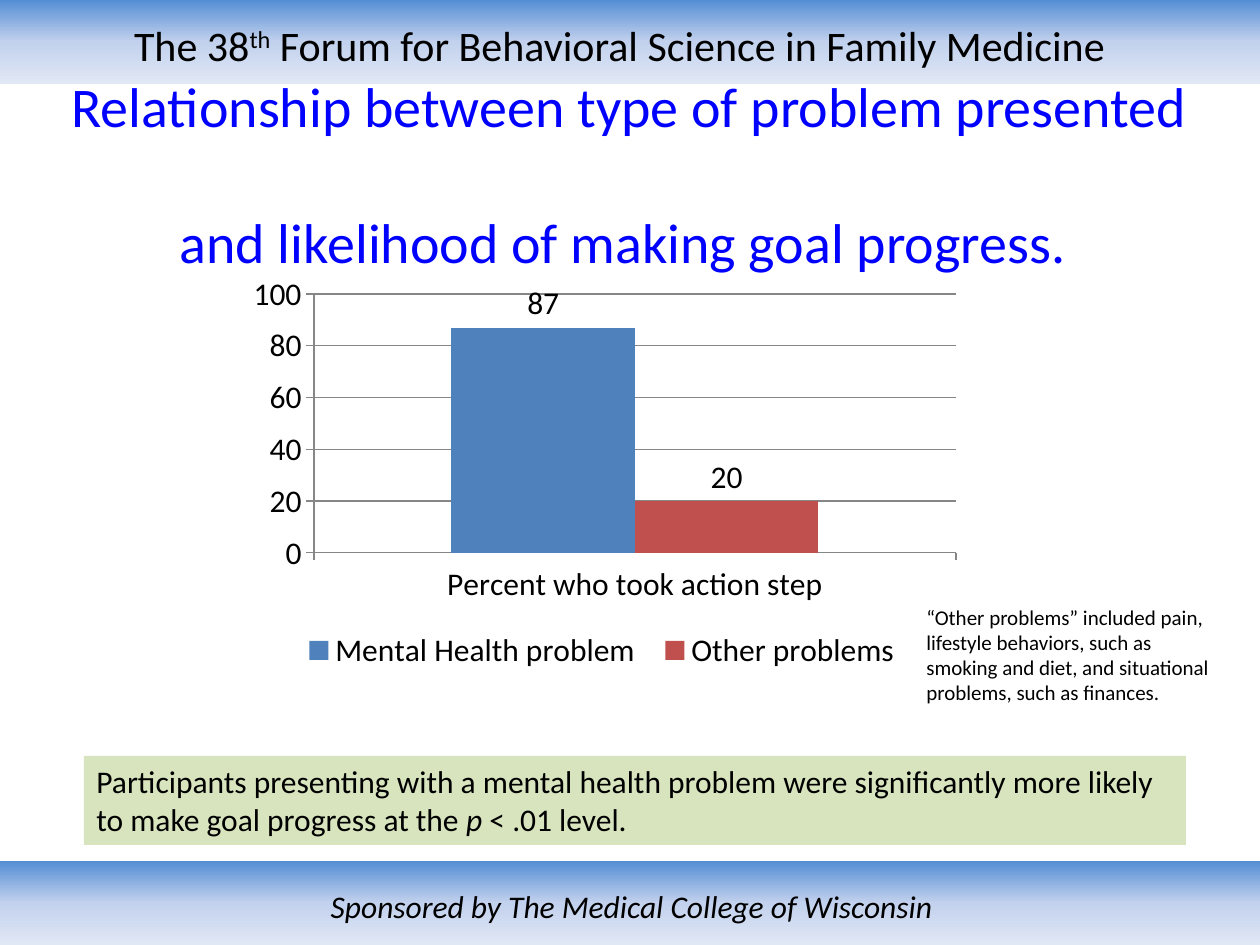
from copy import deepcopy

from lxml import etree
from pptx import Presentation, util as u
from pptx.chart.data import CategoryChartData
from pptx.dml.color import RGBColor
from pptx.enum import chart as ch, shapes, text
from pptx.oxml.ns import qn

PX = 914400 / 126
FONT = "Calibri"
COLORS = {
    "text": "000000", "title": "0000FF", "callout": "D7E4BD", "grid": "868686",
    "mental": "4F81BD", "other": "C0504D",
}
BAND_STOPS = [(0, "558ED5"), (0.5, "C2D1ED"), (1, "E1E8F5")]

BANDS = [
    {"box": (0, 0, 1260, 84), "size": 24, "right": 33, "runs": [
        ("The 38", {}), ("th", {"baseline": "30000"}),
        (" Forum for Behavioral Science in Family Medicine", {})]},
    {"box": (0, 861, 1264, 84), "size": 18, "right": 13, "runs": [
        ("Sponsored by The Medical College of Wisconsin", {"italic": True})]},
]
TITLE = {"box": (53, 126, 1153, 94), "size": 32, "lines": [
    "Relationship between type of problem presented",
    "and likelihood of making goal progress. "]}
CHART = {
    "box": (231, 262, 976, 551),
    "category": "Percent who took action step",
    "series": [("Mental Health problem", 87, "mental"), ("Other problems", 20, "other")],
    "plot": (0.085, 0.058, 0.658, 0.47),
    "legend": (0.06, 0.66, 0.64, 0.09),
}
NOTE = {"box": (914, 598, 325, 115), "size": 12, "runs": [
    ("“Other problems” included pain, lifestyle behaviors, such as smoking and diet, "
     "and situational problems, such as finances.", {})]}
CALLOUT = {"box": (84, 756, 1102, 89), "size": 18, "fill": "callout", "runs": [
    ("Participants presenting with a mental health problem were significantly "
     "more likely to make goal progress at the ", {}),
    ("p", {"italic": True}), (" < .01 level.", {})]}


def emu(px):
    return u.Emu(round(px * PX))


def place(box):
    return [emu(v) for v in box]


def rgb(name):
    return RGBColor.from_string(COLORS[name])


def set_font(font, size, color="text"):
    for key, value in {"name": FONT, "size": u.Pt(size)}.items():
        setattr(font, key, value)
    font.color.rgb = rgb(color)


def write(paragraph, runs, size, color="text"):
    for words, style in runs:
        run = paragraph.add_run()
        run.text = words
        set_font(run.font, size, color)
        if style.get("italic"):
            run.font.italic = True
        if "baseline" in style:
            run._r.get_or_add_rPr().set("baseline", style["baseline"])


def add_band(slide, band):
    bar = slide.shapes.add_shape(shapes.MSO_SHAPE.RECTANGLE, *place(band["box"]))
    bar.shadow.inherit = False
    bar.line.fill.background()
    bar.fill.gradient()
    bar.fill.gradient_angle = 270
    stop_list = bar._element.spPr.find(".//" + qn("a:gsLst"))
    stop_list.append(deepcopy(stop_list[-1]))
    for stop, (position, color) in zip(bar.fill.gradient_stops, BAND_STOPS):
        stop.position = position
        stop.color.rgb = RGBColor.from_string(color)
    frame = bar.text_frame
    frame.vertical_anchor = text.MSO_ANCHOR.MIDDLE
    frame.margin_top, frame.margin_right = emu(11), emu(band["right"])
    frame.paragraphs[0].alignment = text.PP_ALIGN.CENTER
    write(frame.paragraphs[0], band["runs"], band["size"])


def fill_title(heading):
    heading.left, heading.top, heading.width, heading.height = place(TITLE["box"])
    frame = heading.text_frame
    frame.auto_size = text.MSO_AUTO_SIZE.NONE
    frame.vertical_anchor = text.MSO_ANCHOR.MIDDLE
    for number, line in enumerate(TITLE["lines"]):
        paragraph = frame.add_paragraph() if number else frame.paragraphs[0]
        paragraph.alignment = text.PP_ALIGN.CENTER
        paragraph.space_before = u.Pt(39 * number)
        write(paragraph, [(line, {})], TITLE["size"], "title")


def add_text(slide, part):
    box = slide.shapes.add_textbox(*place(part["box"]))
    box.text_frame.word_wrap = True
    box.text_frame.auto_size = text.MSO_AUTO_SIZE.SHAPE_TO_FIT_TEXT
    if "fill" in part:
        box.fill.solid()
        box.fill.fore_color.rgb = rgb(part["fill"])
    write(box.text_frame.paragraphs[0], part["runs"], part["size"])


def manual_layout(element, area, inner=False):
    layout = element.find(qn("c:layout"))
    if layout is None:
        layout = etree.Element(qn("c:layout"))
        if inner:
            element.insert(0, layout)
        else:
            element.find(qn("c:legendPos")).addnext(layout)
    for child in list(layout):
        layout.remove(child)
    manual = etree.SubElement(layout, qn("c:manualLayout"))
    settings = [("layoutTarget", "inner")] if inner else []
    settings += [("xMode", "edge"), ("yMode", "edge"), *zip("xywh", area)]
    for tag, value in settings:
        etree.SubElement(manual, qn("c:" + tag)).set("val", str(value))


def add_chart(slide):
    data = CategoryChartData(number_format="General")
    data.categories = [CHART["category"]]
    for name, value, _ in CHART["series"]:
        data.add_series(name, [value])
    chart = slide.shapes.add_chart(
        ch.XL_CHART_TYPE.COLUMN_CLUSTERED, *place(CHART["box"]), data).chart
    set_font(chart.font, 18)
    chart.has_title = False
    chart.has_legend = True
    chart.legend.position = ch.XL_LEGEND_POSITION.BOTTOM
    chart.legend.include_in_layout = False
    plot = chart.plots[0]
    plot.gap_width, plot.overlap, plot.vary_by_categories = 150, 0, False
    for series, (_, _, color) in zip(plot.series, CHART["series"]):
        series.format.fill.solid()
        series.format.fill.fore_color.rgb = rgb(color)
        labels = series.data_labels
        labels.show_value = True
        labels.position = ch.XL_LABEL_POSITION.OUTSIDE_END
    scale = chart.value_axis
    for key, value in {"minimum_scale": 0, "maximum_scale": 100, "major_unit": 20,
                       "has_major_gridlines": True}.items():
        setattr(scale, key, value)
    for axis in (scale, chart.category_axis):
        axis.major_tick_mark = ch.XL_TICK_MARK.OUTSIDE
    for line in (scale.format.line, chart.category_axis.format.line,
                 scale.major_gridlines.format.line):
        line.color.rgb = rgb("grid")
        line.width = u.Pt(0.75)
    manual_layout(chart._chartSpace.find(".//" + qn("c:plotArea")), CHART["plot"], True)
    manual_layout(chart._chartSpace.find(".//" + qn("c:legend")), CHART["legend"])


def main():
    deck = Presentation()
    deck.slide_width, deck.slide_height = emu(1260), emu(945)
    slide = deck.slides.add_slide(deck.slide_layouts[5])
    for band in BANDS:
        add_band(slide, band)
    fill_title(slide.shapes.title)
    add_chart(slide)
    for part in (NOTE, CALLOUT):
        add_text(slide, part)
    deck.save("out.pptx")


if __name__ == "__main__":
    main()
